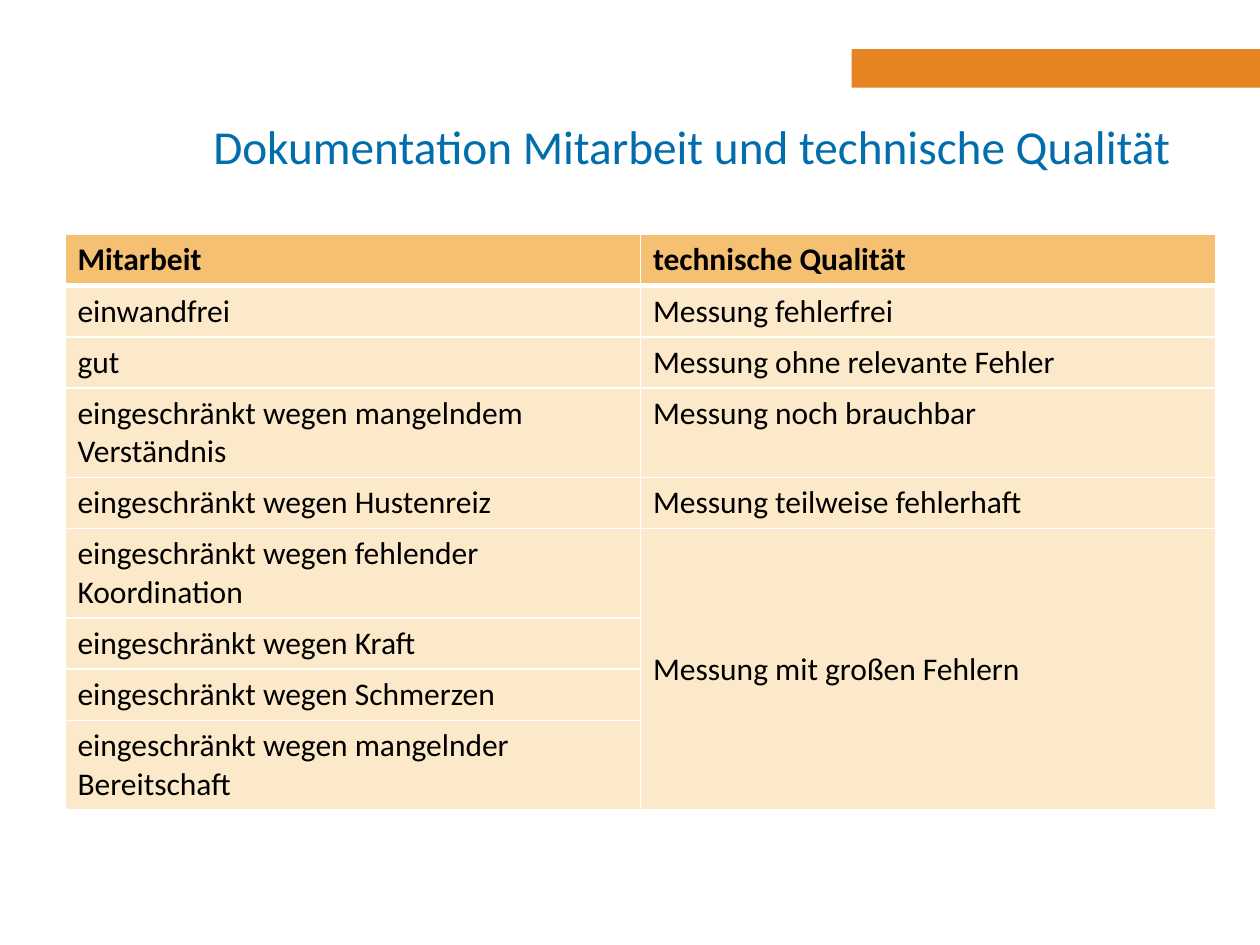
"""Builds a slide with a table on cooperation and technical quality of a test."""
import pptx
import pptx.dml.color
import pptx.enum.shapes
import pptx.enum.text
import pptx.util
from lxml import etree

Cm, Pt = pptx.util.Cm, pptx.util.Pt
MID = pptx.enum.text.MSO_ANCHOR.MIDDLE

TITLE = "Dokumentation Mitarbeit und technische Qualität"
ROWS = [
    ("Mitarbeit", "technische Qualität"),
    ("einwandfrei", "Messung fehlerfrei"),
    ("gut", "Messung ohne relevante Fehler"),
    ("eingeschränkt wegen mangelndem Verständnis", "Messung noch brauchbar"),
    ("eingeschränkt wegen Hustenreiz", "Messung teilweise fehlerhaft"),
    ("eingeschränkt wegen fehlender Koordination", "Messung mit großen Fehlern"),
    ("eingeschränkt wegen Kraft", None),
    ("eingeschränkt wegen Schmerzen", None),
    ("eingeschränkt wegen mangelnder Bereitschaft", None),
]
LONG = 35
SINGLE, DOUBLE = 1.03, 1.8
COL = 11.6
MERGE = 5


def rgb(code):
    return pptx.dml.color.RGBColor.from_string(code)


def paint(shape, code):
    shape.fill.solid()
    shape.fill.fore_color.rgb = rgb(code)


def style(frame, size, code, bold=False):
    for run in frame.paragraphs[0].runs:
        run.font.name = "Calibri"
        run.font.size = Pt(size)
        run.font.bold = bold
        run.font.color.rgb = rgb(code)


def border(cell, row):
    top, base = (3 if row == 1 else 1), (3 if row == 0 else 1)
    props = cell._tc.get_or_add_tcPr()
    ns = "{http://schemas.openxmlformats.org/drawingml/2006/main}"
    for side, width in (("L", 1), ("R", 1), ("T", top), ("B", base)):
        line = etree.SubElement(props, f"{ns}ln{side}", w=str(Pt(width)))
        fill = etree.SubElement(line, ns + "solidFill")
        etree.SubElement(fill, ns + "srgbClr", val="FFFFFF")


def add_title(slide):
    title = slide.shapes.title
    title.left, title.top = Cm(3.76), Cm(1.76)
    title.width, title.height = Cm(20.37), Cm(2.36)
    frame = title.text_frame
    frame.text = TITLE
    frame.auto_size = pptx.enum.text.MSO_AUTO_SIZE.NONE
    frame.vertical_anchor = MID
    frame.paragraphs[0].alignment = pptx.enum.text.PP_ALIGN.CENTER
    style(frame, 27, "006EAC")


def add_grid(slide):
    sizes = [DOUBLE if len(left) > LONG else SINGLE for left, _ in ROWS]
    grid = slide.shapes.add_table(
        len(ROWS), 2, Cm(1.31), Cm(4.73), Cm(2 * COL), Cm(sum(sizes))).table
    for col in grid.columns:
        col.width = Cm(COL)
    grid.cell(MERGE, 1).merge(grid.cell(len(ROWS) - 1, 1))
    grid.cell(MERGE, 1).vertical_anchor = MID
    for i, (texts, size) in enumerate(zip(ROWS, sizes)):
        grid.rows[i].height = Cm(size)
        for j, text in enumerate(texts):
            if text is None:
                continue
            cell = grid.cell(i, j)
            cell.text_frame.text = text
            style(cell.text_frame, 18, "000000", i == 0)
            border(cell, i)
            paint(cell, "FBE9C9" if i else "F5C071")


def main():
    deck = pptx.Presentation()
    deck.slide_width, deck.slide_height = Cm(25.4), Cm(19.05)
    slide = deck.slides.add_slide(deck.slide_layouts[5])
    bar = slide.shapes.add_shape(
        pptx.enum.shapes.MSO_SHAPE.RECTANGLE, Cm(17.17), Cm(0.99), Cm(8.23), Cm(0.78))
    bar.shadow.inherit = False
    paint(bar, "E68323")
    bar.line.fill.background()
    add_title(slide)
    add_grid(slide)
    deck.save("out.pptx")


if __name__ == "__main__":
    main()
